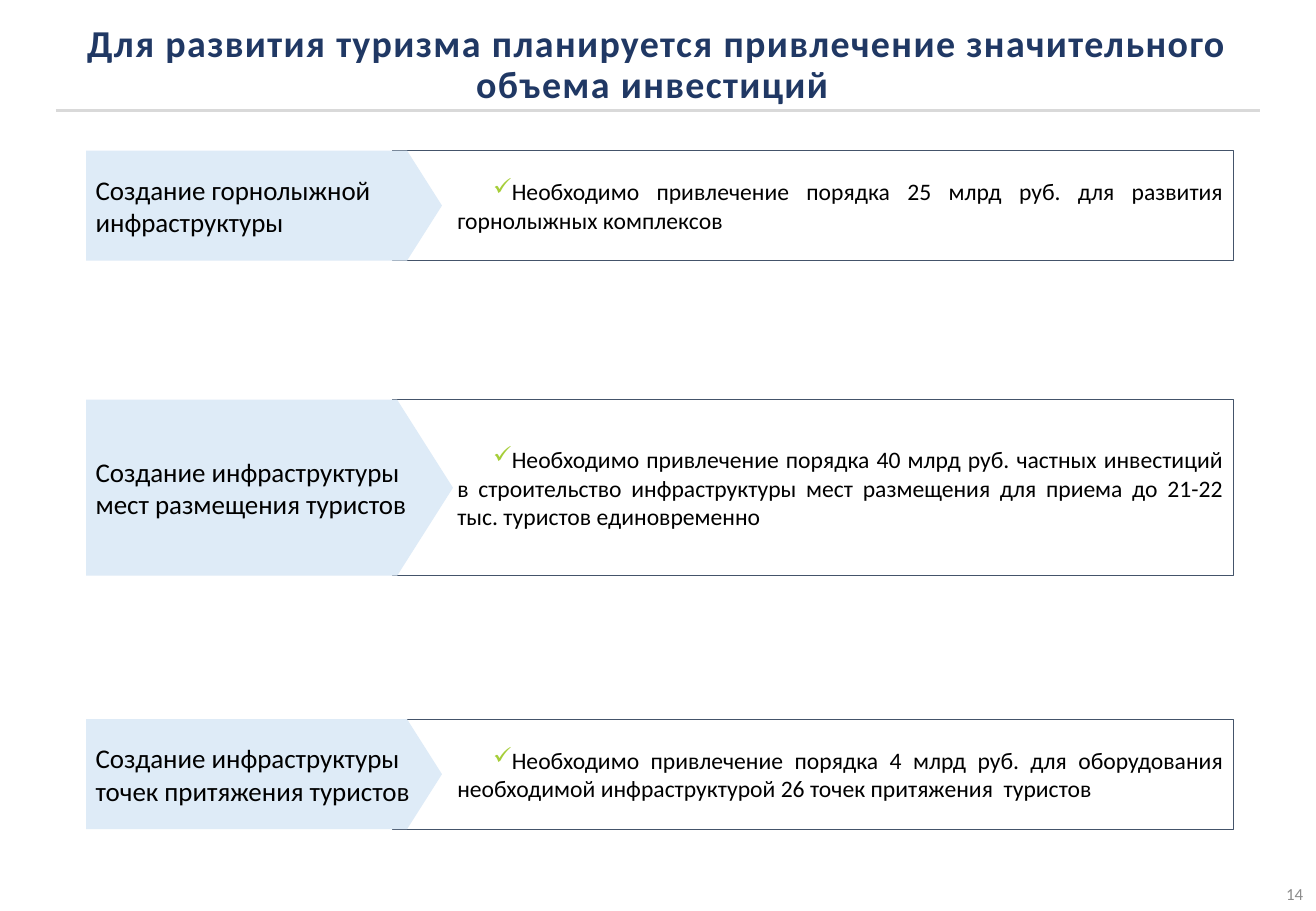
"""Build the slide on investment needed for tourism."""
from dataclasses import dataclass

from lxml import etree
from pptx import Presentation
from pptx import util as u
from pptx.dml.color import RGBColor
from pptx.enum import shapes, text
from pptx.oxml import ns

NAVY = RGBColor(0x20, 0x38, 0x64)
SLATE = RGBColor(0x44, 0x54, 0x6A)
PALE = RGBColor(0xDE, 0xEB, 0xF7)
SILVER = RGBColor(0xD9, 0xD9, 0xD9)
GREY = RGBColor(0x8C, 0x8C, 0x8C)
BLACK = RGBColor(0, 0, 0)
LIME = RGBColor(0xA6, 0xCE, 0x39)

LEFT, BOX_LEFT, BOX_WIDTH = 1.8, 8.2, 17.58
POINT = 0.317


@dataclass
class Goal:
    label: str
    need: str
    top: float
    height: float
    width: float


GOALS = [
    Goal("Создание горнолыжной инфраструктуры",
         "Необходимо привлечение порядка 25 млрд руб. для развития "
         "горнолыжных комплексов", 3.15, 2.3, 7.44),
    Goal("Создание инфраструктуры мест размещения туристов",
         "Необходимо привлечение порядка 40 млрд руб. частных инвестиций "
         "в строительство инфраструктуры мест размещения для приема "
         "до 21-22 тыс. туристов единовременно", 8.36, 3.68, 7.67),
    Goal("Создание инфраструктуры точек притяжения туристов",
         "Необходимо привлечение порядка 4 млрд руб. для оборудования "
         "необходимой инфраструктурой 26 точек притяжения  туристов",
         15.04, 2.3, 7.44),
]


def add_mark(para) -> None:
    """Give a paragraph a green tick and its indents."""
    props = para._p.get_or_add_pPr()
    props.set("marL", str(u.Cm(0.75)))
    props.set("indent", str(u.Cm(0.75)))
    color = etree.SubElement(props, ns.qn("a:buClr"))
    etree.SubElement(color, ns.qn("a:srgbClr"), val=str(LIME))
    etree.SubElement(props, ns.qn("a:buChar"), char="✓")
    tabs = etree.SubElement(props, ns.qn("a:tabLst"))
    etree.SubElement(tabs, ns.qn("a:tab"), pos=str(u.Cm(0.75)), algn="l")


def write(shape, words: str, size: float, color: RGBColor,
          align: text.PP_ALIGN, left: float = 0.19, right: float = 0.19,
          bold: bool = False, mark: bool = False):
    """Fill a shape with one paragraph and return it."""
    frame = shape.text_frame
    frame.word_wrap = True
    frame.vertical_anchor = text.MSO_ANCHOR.MIDDLE
    frame.margin_left, frame.margin_right = u.Cm(left), u.Cm(right)
    frame.margin_top = frame.margin_bottom = u.Cm(0.1)
    para = frame.paragraphs[0]
    para.text = words
    para.alignment = align
    if mark:
        add_mark(para)
    font = para.font
    font.name, font.size, font.bold = "Calibri", u.Pt(size), bold
    font.color.rgb = color
    return para


def add_head(slide) -> None:
    """Draw the title and the rule under it."""
    rule = slide.shapes.add_connector(
        shapes.MSO_CONNECTOR.STRAIGHT,
        u.Cm(1.17), u.Cm(2.31), u.Cm(26.34), u.Cm(2.31))
    rule.line.color.rgb = SILVER
    rule.line.width = u.Pt(2.25)
    etree.SubElement(rule._element.spPr, ns.qn("a:effectLst"))
    title = slide.shapes.add_textbox(
        u.Cm(1.17), u.Cm(0.51), u.Cm(25.15), u.Cm(1.73))
    para = write(title, "Для развития туризма планируется привлечение "
                 "значительного объема инвестиций ", 22.5, NAVY,
                 text.PP_ALIGN.CENTER, bold=True)
    para.line_spacing = 0.9
    para.runs[0]._r.get_or_add_rPr().set("spc", "80")


def add_goal(slide, goal: Goal) -> None:
    """Draw the framed need and the arrow that names it."""
    top, height = u.Cm(goal.top), u.Cm(goal.height)
    box = slide.shapes.add_shape(
        shapes.MSO_SHAPE.RECTANGLE, u.Cm(BOX_LEFT), top,
        u.Cm(BOX_WIDTH), height)
    box.shadow.inherit = False
    box.fill.background()
    box.line.color.rgb = SLATE
    box.line.width = u.Pt(0.75)
    write(box, goal.need, 14, BLACK, text.PP_ALIGN.JUSTIFY,
          left=0.61, right=0.2, mark=True)
    arrow = slide.shapes.add_shape(
        shapes.MSO_SHAPE.PENTAGON, u.Cm(LEFT), top, u.Cm(goal.width), height)
    arrow.adjustments[0] = POINT
    arrow.shadow.inherit = False
    arrow.fill.solid()
    arrow.fill.fore_color.rgb = PALE
    arrow.line.fill.background()
    write(arrow, goal.label, 16, BLACK, text.PP_ALIGN.LEFT,
          left=0.2, right=0.2)


def main() -> None:
    """Build and save the slide."""
    deck = Presentation()
    deck.slide_width, deck.slide_height = u.Cm(27.51), u.Cm(19.05)
    slide = deck.slides.add_slide(deck.slide_layouts[6])
    add_head(slide)
    page = slide.shapes.add_textbox(
        u.Cm(22.91), u.Cm(18.34), u.Cm(4.52), u.Cm(0.69))
    write(page, "14", 10, GREY, text.PP_ALIGN.RIGHT)
    for goal in GOALS:
        add_goal(slide, goal)
    deck.save("out.pptx")


if __name__ == "__main__":
    main()
